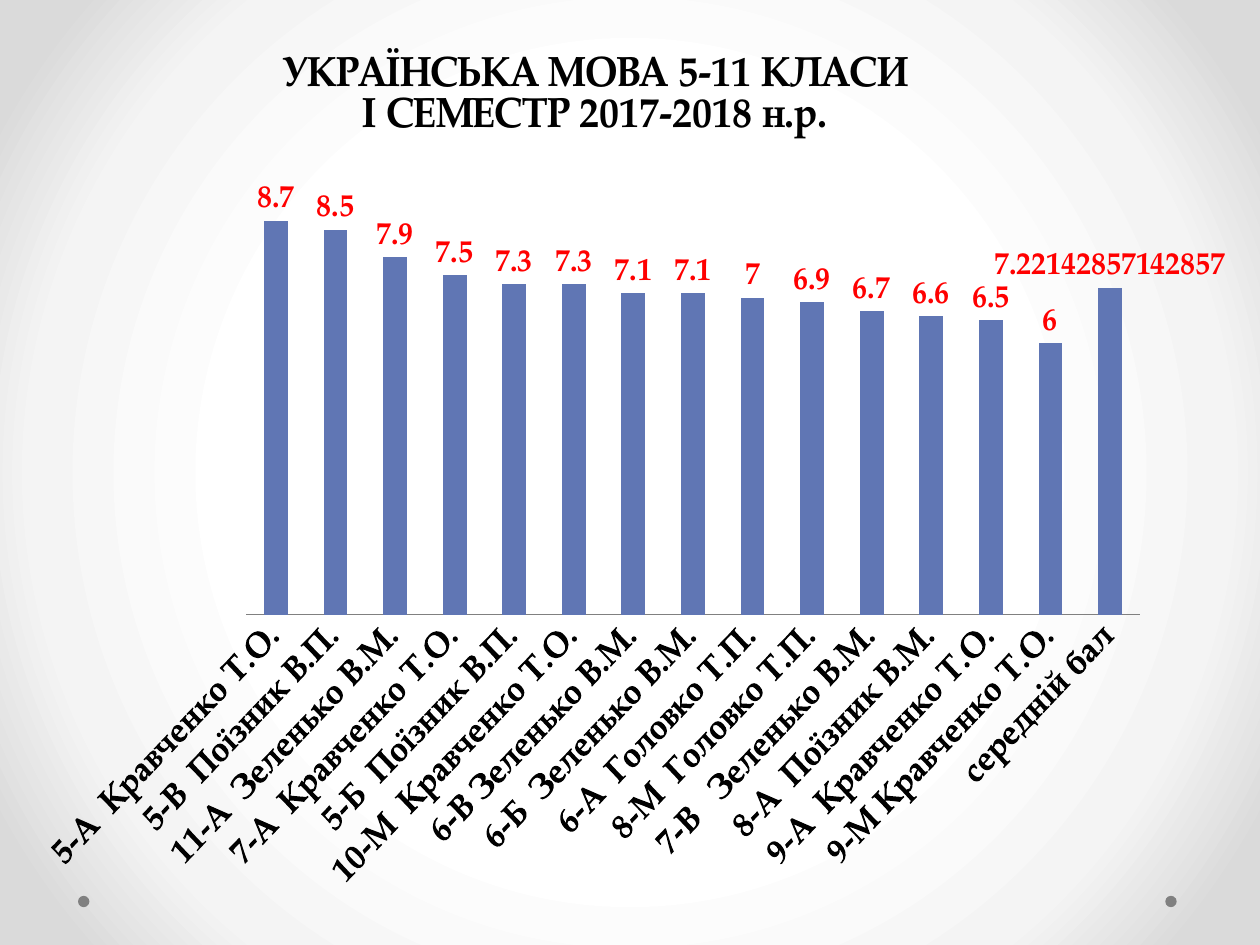
from pptx import Presentation
from pptx.chart.data import CategoryChartData
from pptx.dml.color import RGBColor
from pptx.enum.chart import XL_CHART_TYPE, XL_LABEL_POSITION, XL_TICK_MARK
from pptx.enum.shapes import MSO_SHAPE
from pptx.oxml import parse_xml
from pptx.oxml.ns import nsdecls, qn
from pptx.util import Pt

BLACK = RGBColor(0x00, 0x00, 0x00)
GREY = RGBColor(0x80, 0x80, 0x80)
BLUE = RGBColor(0x60, 0x76, 0xB4)
RED = RGBColor(0xFF, 0x00, 0x00)
WHITE = RGBColor(0xFF, 0xFF, 0xFF)
PALE = RGBColor(0xF4, 0xF4, 0xF4)
EDGE = RGBColor(0xDA, 0xDA, 0xDA)
FACE = "TeX Gyre Pagella"
TITLE = "УКРАЇНСЬКА МОВА 5-11 КЛАСИ\nІ СЕМЕСТР 2017-2018 н.р."
MEAN = "7.22142857142857"
MARKS = {
    "5-А  Кравченко Т.О.": 8.7,
    "5-В  Поїзник В.П.": 8.5,
    "11-А  Зеленько В.М.": 7.9,
    "7-А  Кравченко Т.О.": 7.5,
    "5-Б  Поїзник В.П.": 7.3,
    "10-М  Кравченко Т.О.": 7.3,
    "6-В Зеленько В.М.": 7.1,
    "6-Б  Зеленько В.М.": 7.1,
    "6-А  Головко Т.П.": 7,
    "8-М  Головко Т.П.": 6.9,
    "7-В   Зеленько В.М.": 6.7,
    "8-А  Поїзник В.М.": 6.6,
    "9-А  Кравченко Т.О.": 6.5,
    "9-М Кравченко Т.О.": 6,
    "середній бал": 7.22,
}


def style(part, **vals):
    """Set each given format value on a part."""
    for key, val in vals.items():
        setattr(part, key, val)


def ink(font, size, color=BLACK, bold=True):
    """Give a font its face, size, weight and colour."""
    style(font, name=FACE, size=Pt(size), bold=bold)
    font.color.rgb = color


def place(node, index, width, height, **box):
    """Lay out a chart element by points within a chart of the given size."""
    for old in node.findall(qn("c:layout")):
        node.remove(old)
    full = {"x": width, "y": height, "w": width, "h": height}
    inner = '<c:layoutTarget val="inner"/>' if "w" in box else ""
    modes = "".join(f'<c:{key}Mode val="edge"/>' for key in "xy")
    sizes = "".join(
        f'<c:{key} val="{val / full[key]:.4f}"/>' for key, val in box.items())
    node.insert(index, parse_xml(
        f'<c:layout {nsdecls("c")}><c:manualLayout>{inner}{modes}{sizes}'
        '</c:manualLayout></c:layout>'))


def paint(slide):
    """Fill the background with a round gradient."""
    fill = slide.background.fill
    fill.gradient()
    stops = "".join(
        f'<a:gs pos="{pos * 1000}"><a:srgbClr val="{color}"/></a:gs>'
        for pos, color in ((50, WHITE), (76, PALE), (92, EDGE)))
    grad = parse_xml(
        f'<a:gradFill {nsdecls("a")} rotWithShape="1"><a:gsLst>{stops}</a:gsLst>'
        '<a:path path="circle"><a:fillToRect l="50000" t="50000" r="50000" '
        'b="50000"/></a:path></a:gradFill>')
    old = next(slide.element.iter(qn("a:gradFill")))
    old.getparent().replace(old, grad)


def add_dots(slide, left, top, width, size):
    """Place one grey dot at each end of the given box."""
    for x in (left, left + width - size):
        dot = slide.shapes.add_shape(
            MSO_SHAPE.OVAL, Pt(x), Pt(top), Pt(size), Pt(size))
        dot.shadow.inherit = False
        dot.fill.solid()
        dot.fill.fore_color.rgb = GREY
        dot.line.fill.background()


def add_marks(slide, left, top, width, height):
    """Place the column chart of class marks in the given box."""
    data = CategoryChartData()
    data.categories = list(MARKS)
    data.add_series("Series 1", list(MARKS.values()))
    chart = slide.shapes.add_chart(
        XL_CHART_TYPE.COLUMN_CLUSTERED,
        Pt(left), Pt(top), Pt(width), Pt(height), data).chart
    ink(chart.font, 10, bold=False)
    style(chart, has_legend=False, has_title=True)

    title = chart.chart_title
    title.include_in_layout = False
    title.text_frame.text = TITLE
    for para in title.text_frame.paragraphs:
        ink(para.runs[0].font, 24)
    place(title._element, 1, width, height, x=152.7, y=13.4)

    axis = chart.category_axis
    style(axis, major_tick_mark=XL_TICK_MARK.NONE, has_major_gridlines=False)
    ink(axis.tick_labels.font, 20)
    axis.format.line.color.rgb = GREY
    axis.format.line.width = Pt(0.5)
    axis._element.find(qn("c:txPr")).find(qn("a:bodyPr")).set("rot", "-2700000")
    style(chart.value_axis, visible=False, has_major_gridlines=False,
          minimum_scale=0, maximum_scale=10)

    plot = chart.plots[0]
    style(plot, gap_width=150, vary_by_categories=False)
    series = plot.series[0]
    series.format.fill.solid()
    series.format.fill.fore_color.rgb = BLUE
    labels = series.data_labels
    style(labels, show_value=True, number_format="General",
          number_format_is_linked=False, position=XL_LABEL_POSITION.OUTSIDE_END)
    ink(labels.font, 18, RED)

    mean = series.points[len(MARKS) - 1].data_label
    style(mean.text_frame, text=MEAN, word_wrap=False)
    ink(mean.text_frame.paragraphs[0].runs[0].font, 18, RED)
    mean.position = XL_LABEL_POSITION.OUTSIDE_END

    area = next(chart._chartSpace.iter(qn("c:plotArea")))
    place(area, 0, width, height, x=133, y=77.4, w=538, h=258.9)


def main():
    """Build and save the slide."""
    deck = Presentation()
    style(deck, slide_width=Pt(720), slide_height=Pt(540))
    slide = deck.slides.add_slide(deck.slide_layouts[6])
    paint(slide)
    add_dots(slide, 44.6, 511.9, 627.8, 6.5)
    add_marks(slide, 14.4, 15.1, 686.2, 504.7)
    deck.save("out.pptx")


if __name__ == "__main__":
    main()
